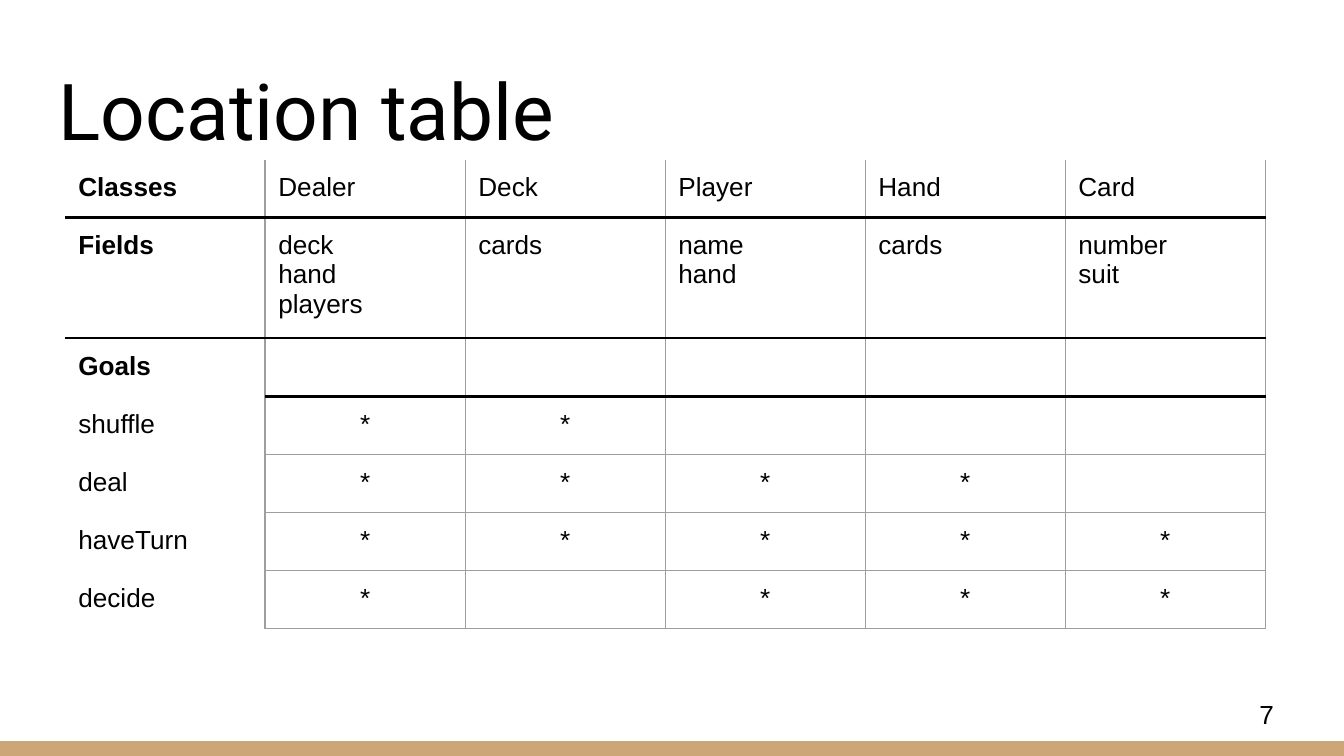
from dataclasses import dataclass

from lxml import etree
from pptx import Presentation
from pptx.dml import color
from pptx.enum import shapes, text
from pptx.oxml import ns
from pptx.util import Cm, Pt

BLACK, GREY, TAN = "000000", "9E9E9E", "CCA677"
INSET = Cm(0.25)
COLUMN_WIDTH = Cm(3.78)


@dataclass
class TableRow:
    label: str
    entries: list[str]
    height: float
    bold: bool = False
    centred: bool = False
    line_below: str = GREY
    line_width: float = 0.75
    label_line: bool = False


def rgb(value: str) -> color.RGBColor:
    return color.RGBColor.from_string(value)


def set_insets(frame) -> None:
    frame.margin_left = frame.margin_right = INSET
    frame.margin_top = frame.margin_bottom = INSET


def add_span(para, words: str, size: float, font: str = "Arial", bold: bool = False) -> None:
    span = para.add_run()
    span.text = words
    span.font.name, span.font.size, span.font.bold = font, Pt(size), bold
    span.font.color.rgb = rgb(BLACK)


def add_border(cell, side: str, hue: str | None, width: float = 0.75) -> None:
    """Draw one side of a cell, or hide it when there is no colour."""
    properties = cell._tc.get_or_add_tcPr()
    line = etree.SubElement(properties, ns.qn(f"a:ln{side}"), w=str(Pt(width)))
    if hue is None:
        etree.SubElement(line, ns.qn("a:noFill"))
    else:
        fill = etree.SubElement(line, ns.qn("a:solidFill"))
        etree.SubElement(fill, ns.qn("a:srgbClr"), val=hue)


def fill_cell(cell, words: str, bold: bool, centred: bool) -> None:
    set_insets(cell)
    frame = cell.text_frame
    for index, line in enumerate(words.split("\n")):
        para = frame.paragraphs[0] if index == 0 else frame.add_paragraph()
        para.alignment = text.PP_ALIGN.CENTER if centred else text.PP_ALIGN.LEFT
        if line:
            add_span(para, line, 14, bold=bold)
        else:
            # Keeps an empty cell from stretching its row
            etree.SubElement(para._p, ns.qn("a:endParaRPr"), sz="1400")


def add_location_table(page, rows: list[TableRow]) -> None:
    columns = 1 + len(rows[0].entries)
    table = page.shapes.add_table(
        len(rows), columns, Cm(1.23), Cm(3.02),
        COLUMN_WIDTH * columns, Cm(sum(row.height for row in rows)),
    ).table
    table.first_row = table.horz_banding = False
    for column in table.columns:
        column.width = COLUMN_WIDTH

    above = [(None, 0.75)] * columns
    for r, row in enumerate(rows):
        table.rows[r].height = Cm(row.height)
        for c, words in enumerate([row.label, *row.entries]):
            cell = table.cell(r, c)
            is_label = c == 0
            fill_cell(cell, words, row.bold and is_label, row.centred and not is_label)
            below = (row.line_below if row.label_line or not is_label else None, row.line_width)
            add_border(cell, "L", None if is_label else GREY)
            add_border(cell, "R", GREY)
            add_border(cell, "T", *above[c])
            add_border(cell, "B", *below)
            cell.fill.background()
            above[c] = below


def goal(name: str, marks: str, height: float = 1.06) -> TableRow:
    return TableRow(name, [mark.strip() for mark in marks], height, centred=True)


ROWS = [
    TableRow("Classes", ["Dealer", "Deck", "Player", "Hand", "Card"], 1.06,
             bold=True, line_below=BLACK, line_width=1.5, label_line=True),
    TableRow("Fields", ["deck\nhand\nplayers", "cards", "name\nhand", "cards", "number\nsuit"], 2.16,
             bold=True, line_below=BLACK, line_width=1.5, label_line=True),
    TableRow("Goals", [""] * 5, 1.1, bold=True, line_below=BLACK, line_width=1.5),
    goal("shuffle", "**   ", 1.1),
    goal("deal", "**** "),
    goal("haveTurn", "*****"),
    goal("decide", "* ***"),
]


def main() -> None:
    deck = Presentation()
    deck.slide_width, deck.slide_height = Cm(25.4), Cm(14.29)
    page = deck.slides.add_slide(deck.slide_layouts[5])

    # Footer band
    band = page.shapes.add_shape(
        shapes.MSO_SHAPE.RECTANGLE, 0, Cm(14.01), deck.slide_width, Cm(0.28))
    band.shadow.inherit = False
    band.fill.solid()
    band.fill.fore_color.rgb = rgb(TAN)
    band.line.fill.background()

    # Title
    title = page.shapes.title
    title.left, title.top, title.width, title.height = Cm(0.86), Cm(0.89), Cm(23.67), Cm(2.31)
    frame = title.text_frame
    set_insets(frame)
    frame.auto_size = text.MSO_AUTO_SIZE.NONE
    frame.vertical_anchor = text.MSO_ANCHOR.BOTTOM
    frame.paragraphs[0].alignment = text.PP_ALIGN.LEFT
    add_span(frame.paragraphs[0], "Location table", 42, "Roboto")

    # Page number
    box = page.shapes.add_textbox(Cm(23.55), Cm(12.95), Cm(1.52), Cm(1.09))
    set_insets(box.text_frame)
    box.text_frame.word_wrap = True
    box.text_frame.vertical_anchor = text.MSO_ANCHOR.MIDDLE
    add_span(box.text_frame.paragraphs[0], "7", 14)

    # Classes, fields and goals
    add_location_table(page, ROWS)
    deck.save("out.pptx")


if __name__ == "__main__":
    main()
